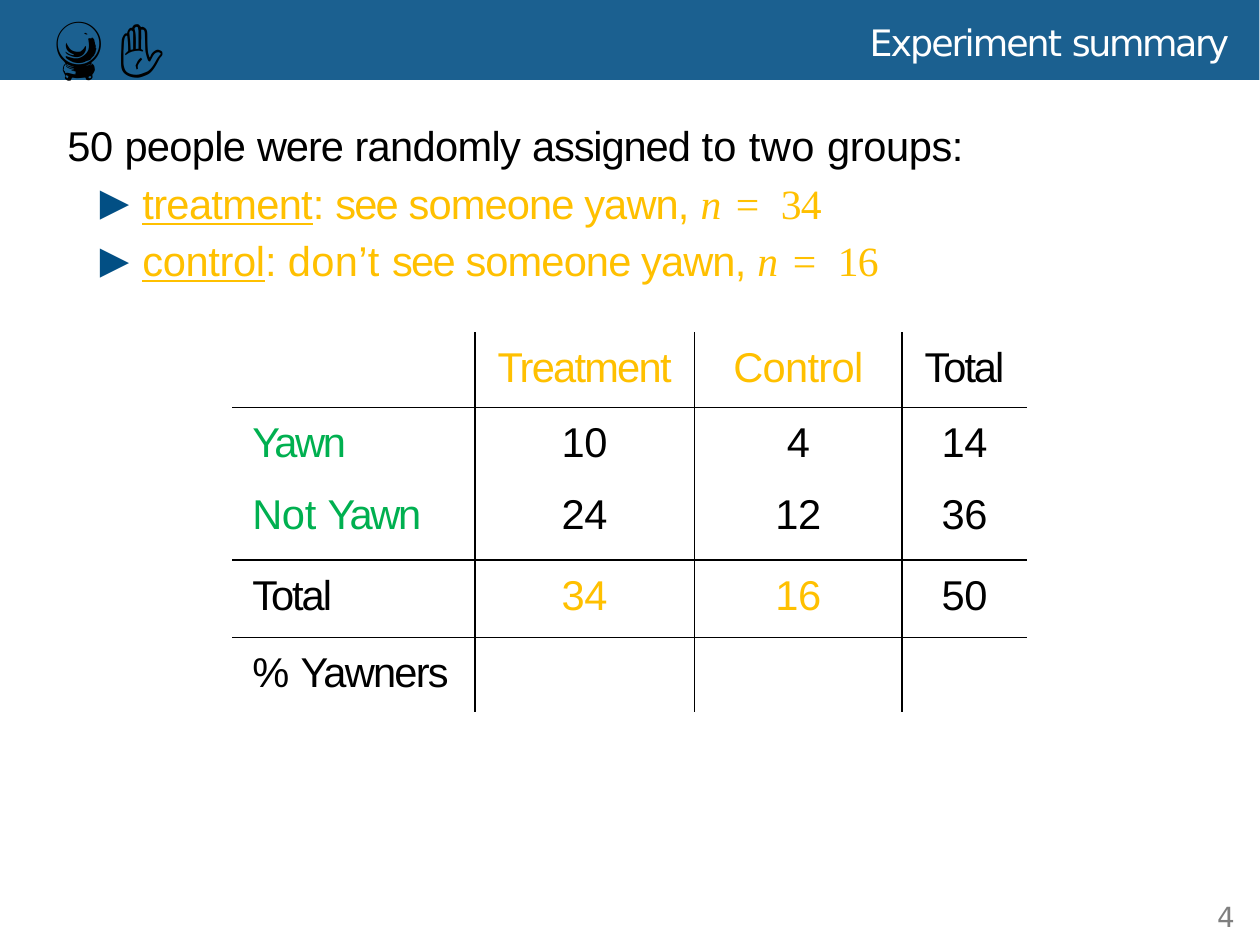
from dataclasses import dataclass
from typing import Any, Sequence

import lxml.etree
import pptx
import pptx.dml.color
import pptx.enum.shapes
import pptx.enum.text
import pptx.oxml.ns
import pptx.util

Inches = pptx.util.Inches
Pt = pptx.util.Pt
qn = pptx.oxml.ns.qn
Align = pptx.enum.text.PP_ALIGN


@dataclass(frozen=True)
class Theme:
    band: str = "1B6090"
    mark: str = "024F84"
    gold: str = "FFC000"
    green: str = "00B050"
    black: str = "000000"
    white: str = "FFFFFF"
    gray: str = "7F7F7F"
    sans: str = "Arial"
    head: str = "DejaVu Sans"
    serif: str = "DejaVu Serif"
    math: str = "Times New Roman"
    icon: str = "Calibri"
    text: float = 12
    title: float = 10.5
    page: float = 8
    big: float = 18
    rule: float = 0.5


THEME = Theme()


@dataclass(frozen=True)
class Bit:
    text: str
    gap: float = 0
    color: str = THEME.black
    font: str = THEME.sans
    size: float = THEME.text
    under: bool = False
    slant: bool = False


@dataclass(frozen=True)
class Group:
    name: str
    gap: float
    verb: Sequence[Bit]
    count: str


@dataclass(frozen=True)
class Box:
    left: float
    top: float
    width: float
    height: float

    def spread(self) -> tuple:
        return tuple(Inches(n) for n in (self.left, self.top, self.width, self.height))


# Text tools
def add_bits(para: Any, bits: Sequence[Bit]) -> None:
    for bit in bits:
        run = para.add_run()
        run.text = bit.text
        font = run.font
        font.name, font.size = bit.font, Pt(bit.size)
        font.bold, font.italic, font.underline = False, bit.slant, bit.under
        font.color.rgb = pptx.dml.color.RGBColor.from_string(bit.color)
        run._r.get_or_add_rPr().set("spc", str(round(bit.gap * 100)))


def fill_text(frame: Any, lines: Sequence[Sequence[Bit]], align: Any = Align.LEFT,
              space: float = 0) -> None:
    for i, bits in enumerate(lines):
        para = frame.paragraphs[0] if i == 0 else frame.add_paragraph()
        para.alignment = align
        para.space_before = Pt(space if i else 0)
        add_bits(para, bits)


def set_frame(shape: Any, box: Box) -> Any:
    shape.left, shape.top, shape.width, shape.height = box.spread()
    frame = shape.text_frame
    frame.margin_left = frame.margin_right = frame.margin_top = frame.margin_bottom = 0
    frame.word_wrap = True
    frame.auto_size = pptx.enum.text.MSO_AUTO_SIZE.NONE
    frame.vertical_anchor = pptx.enum.text.MSO_ANCHOR.TOP
    return frame


def set_mark(para: Any, show: bool) -> None:
    props = para._p.get_or_add_pPr()
    props.set("marL", str(Inches(0.3) if show else 0))
    props.set("indent", str(Inches(-0.17) if show else 0))
    if not show:
        lxml.etree.SubElement(props, qn("a:buNone"))
        return
    tint = lxml.etree.SubElement(props, qn("a:buClr"))
    lxml.etree.SubElement(tint, qn("a:srgbClr"), val=THEME.mark)
    lxml.etree.SubElement(props, qn("a:buSzPct"), val="92000")
    lxml.etree.SubElement(props, qn("a:buFont"), typeface=THEME.serif)
    lxml.etree.SubElement(props, qn("a:buChar"), char="▶")


def group_line(group: Group) -> list[Bit]:
    gold = THEME.gold
    return [
        Bit(group.name, group.gap, gold, under=True),
        Bit(": ", group.gap, gold),
        *group.verb,
        Bit("see ", -0.5, gold),
        Bit("someone yawn, ", -0.25, gold),
        Bit("n ", 0.6, gold, THEME.math, slant=True),
        Bit("= ", 1.6, gold, THEME.math),
        Bit(group.count, -0.2, gold, THEME.math),
    ]


# Table tools
def set_edge(cell: Any, side: str, show: bool) -> None:
    props = cell._tc.get_or_add_tcPr()
    line = lxml.etree.SubElement(props, qn(f"a:ln{side}"), w=str(Pt(THEME.rule)))
    kind = "solidFill" if show else "noFill"
    fill = lxml.etree.SubElement(line, qn(f"a:{kind}"))
    if show:
        lxml.etree.SubElement(fill, qn("a:srgbClr"), val=THEME.black)


def add_grid(slide: Any, box: Box, cols: Sequence[float], rows: Sequence[float],
             cells: Sequence[Sequence[Sequence[Sequence[Bit]]]]) -> None:
    grid = slide.shapes.add_table(len(rows), len(cols), *box.spread()).table
    grid.first_row = grid.horz_banding = False
    for col, width in zip(grid.columns, cols):
        col.width = Inches(width)
    for row, height in zip(grid.rows, rows):
        row.height = Inches(height)
    for r, line in enumerate(cells):
        for c, lines in enumerate(line):
            cell = grid.cell(r, c)
            cell.margin_left = Inches(0 if c else 0.08)
            cell.margin_right = cell.margin_bottom = 0
            cell.margin_top = Inches(0.05)
            inner = {"L": c > 0, "R": c < len(cols) - 1, "T": r > 0, "B": r < len(rows) - 1}
            for side, show in inner.items():
                set_edge(cell, side, show)
            cell.fill.background()
            fill_text(cell.text_frame, lines, Align.CENTER if c else Align.LEFT, 7.2)
            if not lines:
                lxml.etree.SubElement(cell.text_frame.paragraphs[0]._p, qn("a:endParaRPr"),
                                      sz=str(round(THEME.text * 100)))


def main() -> None:
    deck = pptx.Presentation()
    deck.slide_width, deck.slide_height = Pt(363), Pt(272.5)
    slide = deck.slides.add_slide(deck.slide_layouts[1])
    title, body = slide.placeholders[0], slide.placeholders[1]

    # Header band behind the title
    band = slide.shapes.add_shape(pptx.enum.shapes.MSO_SHAPE.RECTANGLE,
                                  *Box(0, 0, 5.04, 0.32).spread())
    band.shadow.inherit = False
    band.fill.solid()
    band.fill.fore_color.rgb = pptx.dml.color.RGBColor.from_string(THEME.band)
    band.line.fill.background()
    title.element.addprevious(band.element)

    # Title
    fill_text(set_frame(title, Box(3.48, 0.08, 1.5, 0.21)), [[
        Bit("Experiment ", -0.55, THEME.white, THEME.head, THEME.title),
        Bit("summary", -0.65, THEME.white, THEME.head, THEME.title)]])

    # Groups list
    groups = [Group("treatment", -0.2, [], "34"),
              Group("control", -0.1, [Bit("don’t ", 0.1, THEME.gold)], "16")]
    intro = [Bit("50 ", -0.1), Bit("people ", -0.2), Bit("were ", -0.3), Bit("randomly ", -0.2),
             Bit("assigned ", -0.3), Bit("to two ", 0.1), Bit("groups:", -0.1)]
    frame = set_frame(body, Box(0.27, 0.48, 3.8, 0.68))
    fill_text(frame, [intro, *map(group_line, groups)], space=2.2)
    for i, para in enumerate(frame.paragraphs):
        set_mark(para, i > 0)

    # Counts table
    def count(*texts: str, color: str = THEME.black) -> list[list[Bit]]:
        return [[Bit(text, -0.1, color)] for text in texts]

    gold, green = THEME.gold, THEME.green
    total = [[Bit("Total", -0.6)]]
    cells = [
        [[], [[Bit("Treatment", -0.5, gold)]], [[Bit("Control", -0.2, gold)]], total],
        [[[Bit("Yawn", -0.7, green)], [Bit("Not ", -0.1, green), Bit("Yawn", -0.7, green)]],
         count("10", "24"), count("4", "12"), count("14", "36")],
        [total, count("34", color=gold), count("16", color=gold), count("50")],
        [[[Bit("% ", -0.1), Bit("Yawners", -0.5)]], [], [], []],
    ]
    add_grid(slide, Box(0.93, 1.33, 3.18, 1.52), [0.97, 0.88, 0.83, 0.5],
             [0.3, 0.61, 0.31, 0.3], cells)

    # Icons and page number
    for box, bit in [
        (Box(0.22, 0.03, 0.6, 0.3), Bit("🔮 ✋", font=THEME.icon, size=THEME.big)),
        (Box(4.87, 3.6, 0.12, 0.15), Bit("4", -0.7, THEME.gray, THEME.head, THEME.page)),
    ]:
        fill_text(set_frame(slide.shapes.add_textbox(*box.spread()), box), [[bit]])

    deck.save("out.pptx")


if __name__ == "__main__":
    main()
